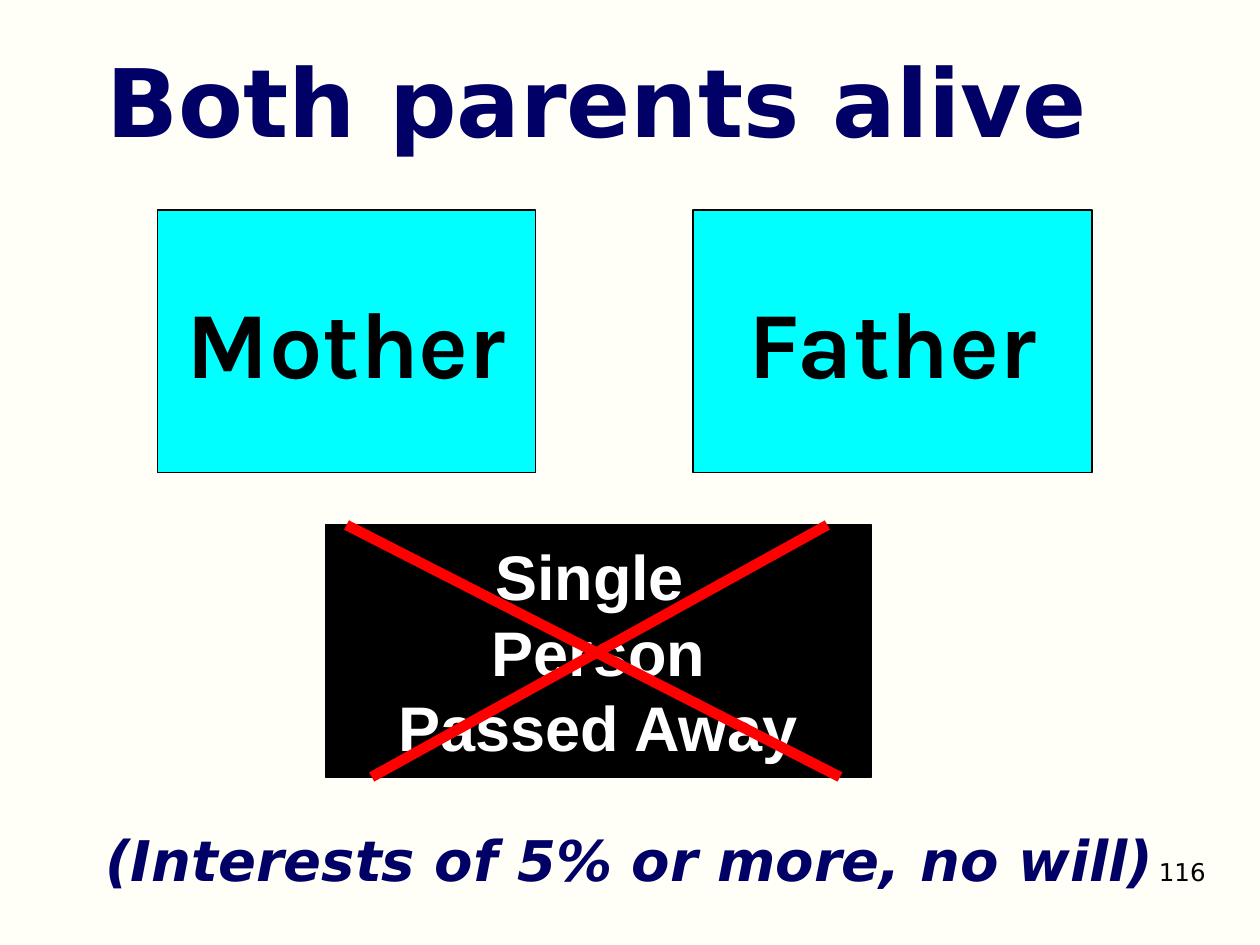
import pptx
import pptx.util
import pptx.dml.color
import pptx.enum.shapes
import pptx.enum.text
import pptx.oxml.ns
import lxml.etree

COLORS = {"paper": "FFFFF7", "navy": "000066", "cyan": "00FFFF",
          "black": "000000", "white": "FFFFFF", "red": "FF0000"}
ALIGN = pptx.enum.text.PP_ALIGN
ANCHOR = pptx.enum.text.MSO_ANCHOR

deck = pptx.Presentation()
deck.slide_width = pptx.util.Inches(10)
deck.slide_height = pptx.util.Inches(7.5)
column = deck.slide_width / 120
row = deck.slide_height / 90
slide = deck.slides.add_slide(deck.slide_layouts[6])


def rgb(name):
    return pptx.dml.color.RGBColor.from_string(COLORS[name])


def add_text(text, left, top, width, height, fill=None, size=54, font="DejaVu Sans",
             color="navy", bold=True, italic=False, align=ALIGN.CENTER,
             anchor=ANCHOR.MIDDLE, wrap=True):
    area = [int(left * column), int(top * row), int(width * column), int(height * row)]
    if fill:
        box = slide.shapes.add_shape(pptx.enum.shapes.MSO_SHAPE.RECTANGLE, *area)
        box.shadow.inherit = False
        box.fill.solid()
        box.fill.fore_color.rgb = rgb(fill)
        box.line.color.rgb = rgb("black")
        box.line.width = pptx.util.Pt(1)
    else:
        box = slide.shapes.add_textbox(*area)
    frame = box.text_frame
    frame.word_wrap = wrap
    frame.vertical_anchor = anchor
    frame.text = text
    for paragraph in frame.paragraphs:
        paragraph.alignment = align
        for run in paragraph.runs:
            run.font.size = pptx.util.Pt(size)
            run.font.name = font
            run.font.bold = bold
            run.font.italic = italic
            run.font.color.rgb = rgb(color)


slide.background.fill.solid()
slide.background.fill.fore_color.rgb = rgb("paper")

add_text("116", 88, 81, 28, 6.25, size=14, color="black", bold=False,
         align=ALIGN.RIGHT, anchor=ANCHOR.TOP)

for parent, left, width in [("Mother", 15, 36), ("Father", 66, 38)]:
    add_text(parent, left, 20, width, 25, fill="cyan", font="Karla",
             color="black", wrap=False)

add_text("Single \nPerson\nPassed Away", 31, 50, 52, 24, fill="black", size=36,
         font="Arial", color="white", wrap=False)

for bottom_column, top_column in [(80, 33), (35.4, 78.8)]:
    cross = slide.shapes.add_connector(
        pptx.enum.shapes.MSO_CONNECTOR.STRAIGHT,
        int(bottom_column * column), int(74 * row), int(top_column * column), int(50 * row))
    cross.line.color.rgb = rgb("red")
    cross.line.width = pptx.util.Pt(6)
    lxml.etree.SubElement(cross.element.spPr, pptx.oxml.ns.qn("a:effectLst"))

add_text("Both parents alive", 9, 2, 102, 15, align=ALIGN.LEFT)
add_text("(Interests of 5% or more, no will)", 2, 78, 116, 7.7, size=32, italic=True,
         anchor=ANCHOR.TOP)

deck.save("out.pptx")
